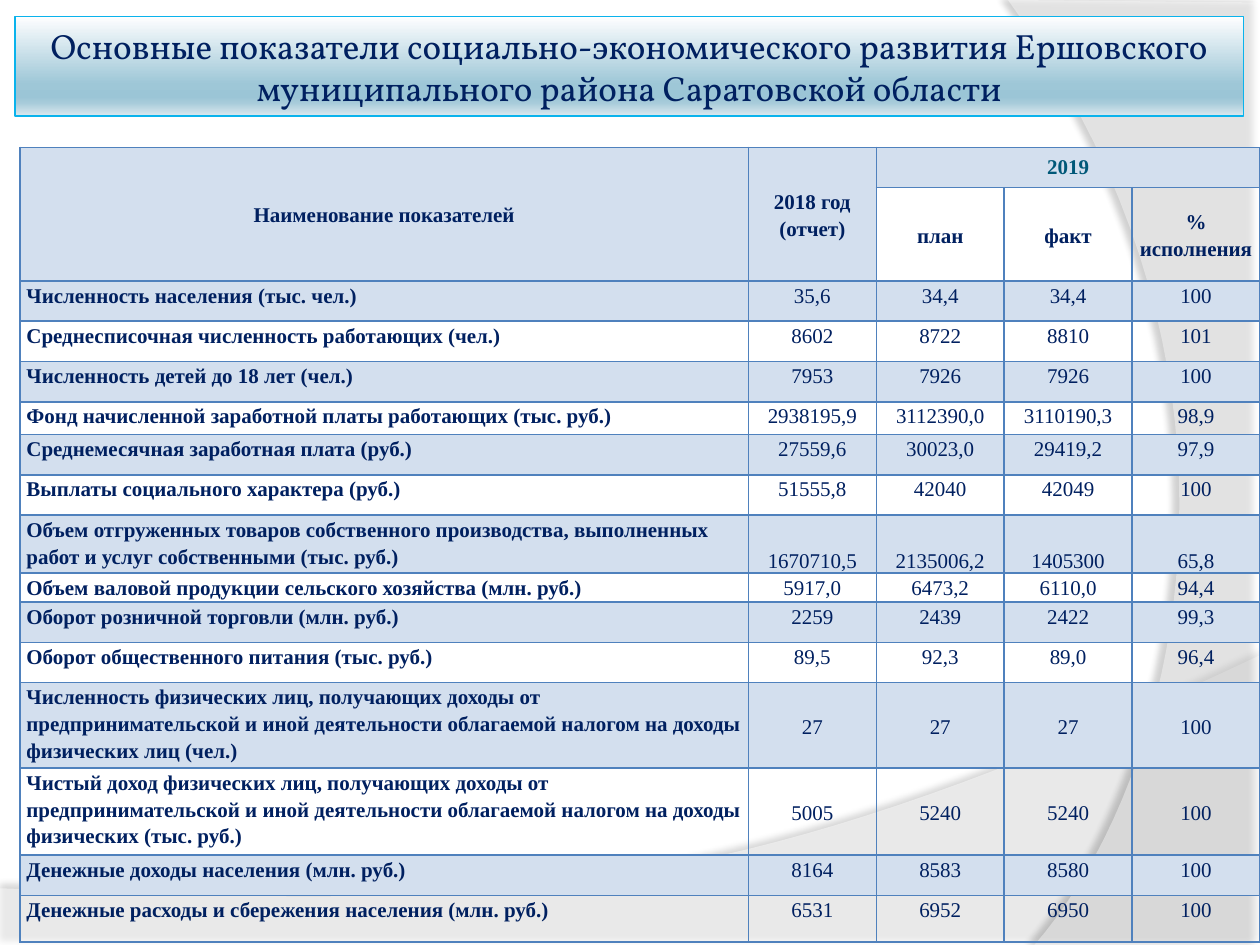
from dataclasses import dataclass

from lxml.etree import SubElement
from pptx import Presentation
from pptx.dml.color import RGBColor
from pptx.enum.shapes import MSO_SHAPE
from pptx.enum.text import MSO_ANCHOR, PP_ALIGN
from pptx.oxml.ns import qn
from pptx.util import Inches, Pt


@dataclass(frozen=True)
class Theme:
    navy: str = "002060"
    teal: str = "005878"
    band: str = "D3DFEE"
    border: str = "4F81BD"
    title_line: str = "0AB3EC"
    white: str = "FFFFFF"
    shadow: str = "000000"
    title_font: str = "Vollkorn"
    table_font: str = "Times New Roman"
    title_size: int = 20
    table_size: int = 12


theme = Theme()


def write_text(text_frame, text, *, size=theme.table_size, font=theme.table_font, color=theme.navy,
               bold=False, align=PP_ALIGN.CENTER, spacing=1.15):
    paragraph = text_frame.paragraphs[0]
    paragraph.text = text
    paragraph.alignment = align
    paragraph.line_spacing = spacing
    for run in paragraph.runs:
        run.font.size = Pt(size)
        run.font.name = font
        run.font.bold = bold
        run.font.color.rgb = RGBColor.from_string(color)
    for line_break in paragraph._p.findall(qn("a:br")):
        SubElement(line_break, qn("a:rPr"), sz=str(size * 100))


def add_color(parent, color, alpha=None):
    element = SubElement(parent, qn("a:srgbClr"), val=color)
    if alpha is not None:
        SubElement(element, qn("a:alpha"), val=str(alpha * 1000))


presentation = Presentation()
presentation.slide_width = Inches(10)
presentation.slide_height = Inches(7.5)
slide = presentation.slides.add_slide(presentation.slide_layouts[6])

waves = [
    ([(0, 7.51), (10, 7.51)], [(10, 5.2), (5.59, 7.29), (3.91, 7.19), (0, 7.05)], 45, 35, 3.5, 270),
    ([(10, 0.02), (10, 7.5)], [(8.21, 7.5), (9.35, 6.19), (10.18, 3), (8, 0)], 40, 45, 4, 180),
]
curve_steps = 40
for corners, curve, opacity, shadow_opacity, distance, direction in waves:
    points = list(corners)
    for step in range(curve_steps + 1):
        t = step / curve_steps
        weights = [(1 - t) ** 3, 3 * t * (1 - t) ** 2, 3 * t ** 2 * (1 - t), t ** 3]
        points.append(tuple(sum(w * p[axis] for w, p in zip(weights, curve)) for axis in (0, 1)))
    points = [(Inches(x), Inches(y)) for x, y in points]
    builder = slide.shapes.build_freeform(*points[0])
    builder.add_line_segments(points[1:], close=True)
    wave = builder.convert_to_shape()
    wave.shadow.inherit = False
    wave.line.fill.background()
    wave.fill.solid()
    wave.fill.fore_color.rgb = RGBColor.from_string(theme.white)
    properties = wave._element.spPr
    fill_color = properties.find(qn("a:solidFill")).find(qn("a:srgbClr"))
    SubElement(fill_color, qn("a:alpha"), val=str(opacity * 1000))
    shadow = SubElement(properties.find(qn("a:effectLst")), qn("a:outerShdw"), blurRad=str(Pt(4)),
                        dist=str(Pt(distance)), dir=str(direction * 60000), algn="ctr", rotWithShape="0")
    add_color(shadow, theme.shadow, shadow_opacity)

title = slide.shapes.add_shape(MSO_SHAPE.RECTANGLE, Inches(0.12), Inches(0.13), Inches(9.75), Inches(0.79))
title.shadow.inherit = False
title.line.color.rgb = RGBColor.from_string(theme.title_line)
title.line.width = Pt(0.75)
title.fill.gradient()
title.fill.gradient_angle = 270
stops = title._element.spPr.find(qn("a:gradFill")).find(qn("a:gsLst"))
stops.clear()
for position, color in [(0, "FEFEFF"), (68, "9EC7D7"), (81, "9BC5D6"), (86, "A5CAD9"), (100, "DAE8EE")]:
    add_color(SubElement(stops, qn("a:gs"), pos=str(position * 1000)), color)
frame = title.text_frame
frame.word_wrap = True
frame.vertical_anchor = MSO_ANCHOR.MIDDLE
frame.margin_left = frame.margin_right = frame.margin_top = frame.margin_bottom = Inches(0.05)
write_text(frame, "Основные показатели социально-экономического развития Ершовского муниципального района "
           "Саратовской области", size=theme.title_size, font=theme.title_font, spacing=1.0)

rows = [
    (0.32, "Наименование показателей", "2018 год\n(отчет)", "2019", "", ""),
    (0.74, "", "", "план", "факт", "% исполнения"),
    (0.32, "Численность населения (тыс. чел.)", "35,6", "34,4", "34,4", "100"),
    (0.32, "Среднесписочная численность работающих (чел.)", "8602", "8722", "8810", "101"),
    (0.32, "Численность детей до 18 лет (чел.)", "7953", "7926", "7926", "100"),
    (0.26, "Фонд начисленной заработной платы работающих (тыс. руб.)",
     "2938195,9", "3112390,0", "3110190,3", "98,9"),
    (0.32, "Среднемесячная заработная плата (руб.)", "27559,6", "30023,0", "29419,2", "97,9"),
    (0.32, "Выплаты социального характера (руб.)", "51555,8", "42040", "42049", "100"),
    (0.46, "Объем отгруженных товаров собственного производства, выполненных работ и услуг "
     "собственными (тыс. руб.)", "1670710,5", "2135006,2", "1405300", "65,8"),
    (0.23, "Объем валовой продукции сельского хозяйства (млн. руб.)", "5917,0", "6473,2", "6110,0", "94,4"),
    (0.32, "Оборот розничной торговли (млн. руб.)", "2259", "2439", "2422", "99,3"),
    (0.32, "Оборот общественного питания (тыс. руб.)", "89,5", "92,3", "89,0", "96,4"),
    (0.68, "Численность физических лиц, получающих доходы от предпринимательской и иной деятельности "
     "облагаемой налогом на доходы физических лиц (чел.)", "27", "27", "27", "100"),
    (0.69, "Чистый доход физических лиц, получающих доходы от предпринимательской и иной деятельности "
     "облагаемой налогом на доходы физических (тыс. руб.)", "5005", "5240", "5240", "100"),
    (0.32, "Денежные доходы населения (млн. руб.)", "8164", "8583", "8580", "100"),
    (0.37, "Денежные расходы и сбережения населения (млн. руб.)", "6531", "6952", "6950", "100"),
]
header_rows = 2
value_anchors = {8: MSO_ANCHOR.BOTTOM, 12: MSO_ANCHOR.MIDDLE, 13: MSO_ANCHOR.MIDDLE}
table_width, name_width, value_columns = 9.84, 5.78, 4

table = slide.shapes.add_table(len(rows), value_columns + 1, Inches(0.16), Inches(1.17),
                               Inches(table_width), Inches(sum(row[0] for row in rows))).table
table.first_row = False
table.horz_banding = False
table.columns[0].width = Inches(name_width)
for column in range(1, value_columns + 1):
    table.columns[column].width = Inches((table_width - name_width) / value_columns)
table.cell(0, 0).merge(table.cell(1, 0))
table.cell(0, 1).merge(table.cell(1, 1))
table.cell(0, 2).merge(table.cell(0, 4))

for row, (height, *texts) in enumerate(rows):
    table.rows[row].height = Inches(height)
    for column, text in enumerate(texts):
        cell = table.cell(row, column)
        cell.margin_left = cell.margin_right = Inches(0.05)
        cell.margin_top = cell.margin_bottom = 0
        is_header = row < header_rows
        if is_header:
            cell.vertical_anchor = MSO_ANCHOR.MIDDLE
        elif column > 0:
            cell.vertical_anchor = value_anchors.get(row, MSO_ANCHOR.TOP)
        else:
            cell.vertical_anchor = MSO_ANCHOR.TOP
        cell_properties = cell._tc.get_or_add_tcPr()
        for side in ("a:lnL", "a:lnR", "a:lnT", "a:lnB"):
            line = SubElement(cell_properties, qn(side), w=str(Pt(1)))
            add_color(SubElement(line, qn("a:solidFill")), theme.border)
        if row % 2 == 0:
            cell.fill.solid()
            cell.fill.fore_color.rgb = RGBColor.from_string(theme.band)
        else:
            cell.fill.background()
        if not cell.is_spanned:
            is_year = text == "2019"
            write_text(cell.text_frame, text, bold=is_header or column == 0,
                       align=PP_ALIGN.CENTER if is_header or column else PP_ALIGN.LEFT,
                       color=theme.teal if is_year else theme.navy, spacing=1.0 if is_year else 1.15)

presentation.save("out.pptx")
